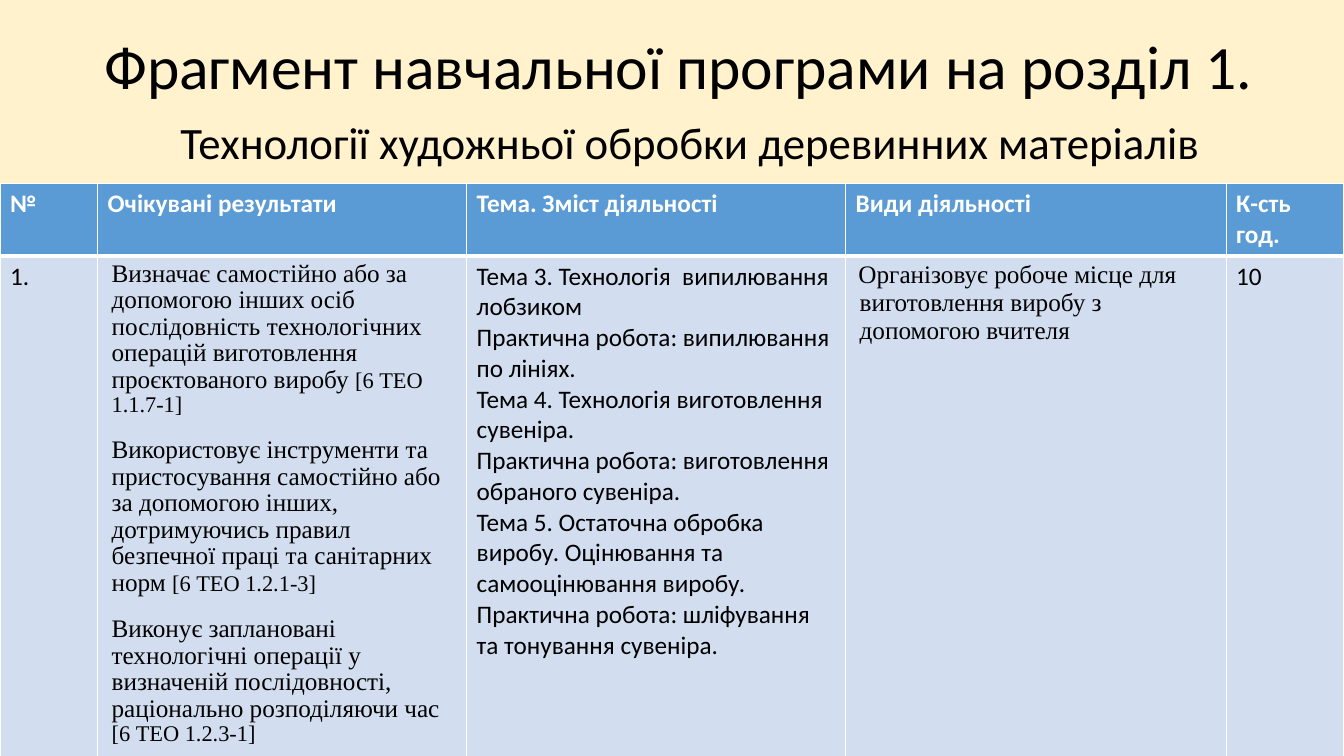
from dataclasses import dataclass, field

from lxml import etree
from pptx import Presentation
from pptx import util as u
from pptx.dml.color import RGBColor
from pptx.enum import text
from pptx.oxml.ns import qn

SANS, SERIF = "Calibri", "Times New Roman"
BLACK, WHITE = "000000", "FFFFFF"
HEADER_FILL, BODY_FILL, BACKGROUND = "5B9BD5", "D2DEEF", "FFF2CC"

CENTRED = {"alignment": text.PP_ALIGN.CENTER}
SPACED = {"space_before": u.Pt(7.2), "space_after": u.Pt(7.2)}
COLUMNS = [2.46, 9.3, 9.55, 9.59, 2.97]
ROWS = [1.83, 13.79]


@dataclass
class Run:
    text: str
    size: float = 18
    font: str = SANS
    color: str = BLACK
    bold: bool = False


@dataclass
class Para:
    runs: list[Run]
    formats: dict = field(default_factory=dict)
    left: float = 0
    indent: float = 0


@dataclass
class Cell:
    paras: list[Para]
    fill: str = BODY_FILL
    bottom: float = 1


def header(label: str) -> Cell:
    return Cell([Para([Run(label, color=WHITE, bold=True)])], HEADER_FILL, 3)


def plain(*lines: str) -> Cell:
    return Cell([Para([Run(line)]) for line in lines])


def outcome(statement: str, code: str) -> Para:
    """An expected result followed by its curriculum code."""
    runs = [Run(statement, font=SERIF), Run(code, 16, SERIF)]
    return Para(runs, {"line_spacing": 0.95, **SPACED}, left=0.1)


TABLE = [
    [header(label) for label in (
        "№", "Очікувані результати", "Тема. Зміст діяльності",
        "Види діяльності", "К-сть год.")],
    [
        plain("1."),
        Cell([
            outcome("Визначає самостійно або за допомогою інших осіб "
                    "послідовність технологічних операцій виготовлення "
                    "проєктованого виробу ", "[6 ТЕО 1.1.7-1]"),
            outcome("Використовує інструменти та пристосування самостійно "
                    "або за допомогою інших, дотримуючись правил безпечної "
                    "праці та санітарних норм ", "[6 ТЕО 1.2.1-3]"),
            outcome("Виконує заплановані технологічні операції у визначеній "
                    "послідовності, раціонально розподіляючи час ",
                    "[6 ТЕО 1.2.3-1]"),
        ]),
        plain(
            "Тема 3. Технологія  випилювання лобзиком",
            "Практична робота: випилювання по лініях.",
            "Тема 4. Технологія виготовлення сувеніра.",
            "Практична робота: виготовлення обраного сувеніра.",
            "Тема 5. Остаточна обробка виробу. Оцінювання та "
            "самооцінювання виробу.",
            "Практична робота: шліфування та тонування сувеніра.",
        ),
        Cell([Para([Run("Організовує робоче місце для виготовлення виробу "
                        "з допомогою вчителя", font=SERIF)],
                   SPACED, left=0.1, indent=-0.03)]),
        plain("10"),
    ],
]


def rgb(value: str) -> RGBColor:
    return RGBColor.from_string(value)


def apply(target, formats: dict) -> None:
    for name, value in formats.items():
        setattr(target, name, value)


def write(tf, paras: list[Para]) -> None:
    for i, para in enumerate(paras):
        p = tf.add_paragraph() if i else tf.paragraphs[0]
        apply(p, para.formats)
        if para.left:
            props = p._p.get_or_add_pPr()
            props.set("marL", str(int(u.Cm(para.left))))
            props.set("indent", str(int(u.Cm(para.indent))))
        for run in para.runs:
            r = p.add_run()
            r.text = run.text
            apply(r.font, {"size": u.Pt(run.size), "name": run.font,
                           "bold": run.bold})
            r.font.color.rgb = rgb(run.color)


def set_borders(cell, bottom: float) -> None:
    tc_pr = cell._tc.get_or_add_tcPr()
    widths = {"a:lnL": 1, "a:lnR": 1, "a:lnT": 1, "a:lnB": bottom}
    for i, (tag, width) in enumerate(widths.items()):
        line = etree.Element(qn(tag), w=str(int(u.Pt(width))))
        fill = etree.SubElement(line, qn("a:solidFill"))
        etree.SubElement(fill, qn("a:srgbClr"), val=WHITE)
        tc_pr.insert(i, line)


def add_programme_table(s) -> None:
    frame = s.shapes.add_table(len(ROWS), len(COLUMNS), 0, u.Cm(4.62),
                               u.Cm(sum(COLUMNS)), u.Cm(sum(ROWS)))
    table = frame.table
    for column, width in zip(table.columns, COLUMNS):
        column.width = u.Cm(width)
    for row, height, contents in zip(table.rows, ROWS, TABLE):
        row.height = u.Cm(height)
        for cell, content in zip(row.cells, contents):
            cell.fill.solid()
            cell.fill.fore_color.rgb = rgb(content.fill)
            set_borders(cell, content.bottom)
            write(cell.text_frame, content.paras)


def main() -> None:
    prs = Presentation()
    apply(prs, {"slide_width": u.Cm(33.87), "slide_height": u.Cm(19.05)})
    s = prs.slides.add_slide(prs.slide_layouts[5])
    s.background.fill.solid()
    s.background.fill.fore_color.rgb = rgb(BACKGROUND)

    title = s.shapes.title
    apply(title, {"left": u.Cm(2.34), "top": u.Cm(0.23),
                  "width": u.Cm(29.9), "height": u.Cm(3.05)})
    apply(title.text_frame, {"vertical_anchor": text.MSO_ANCHOR.MIDDLE,
                             "auto_size": text.MSO_AUTO_SIZE.NONE})
    write(title.text_frame, [Para(
        [Run("Фрагмент навчальної програми на розділ 1. ", 44)],
        {"line_spacing": 0.9, **CENTRED})])

    add_programme_table(s)

    subtitle = s.shapes.add_textbox(u.Cm(3.1), u.Cm(2.77),
                                    u.Cm(28.6), u.Cm(1.63))
    apply(subtitle.text_frame, {
        "word_wrap": True,
        "auto_size": text.MSO_AUTO_SIZE.SHAPE_TO_FIT_TEXT})
    write(subtitle.text_frame, [Para(
        [Run("Технології художньої обробки деревинних матеріалів", 32)],
        CENTRED)])

    prs.save("out.pptx")


if __name__ == "__main__":
    main()
